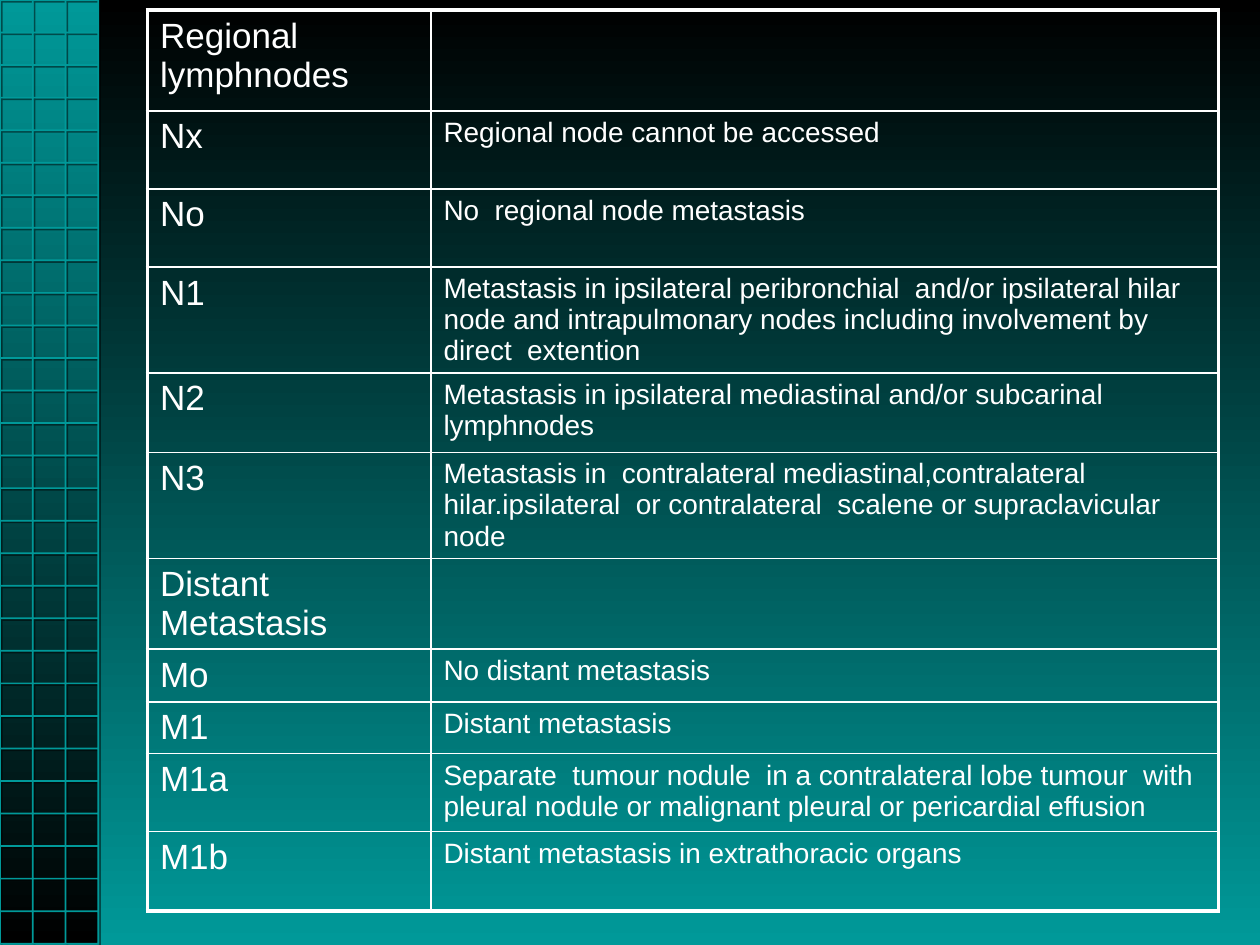
from lxml import etree
from pptx import Presentation
from pptx import util as u
from pptx.dml.color import RGBColor
from pptx.enum import shapes
from pptx.oxml import parse_xml
from pptx.oxml.ns import nsdecls, qn

BLACK, TEAL, WHITE = "000000", "009999", "FFFFFF"
BAND_WIDTH, BAND_HEIGHT = 0.78, 7.49
GRID_COLUMNS, GRID_ROWS = 3, 29
COLUMN_WIDTHS = (2.25, 6.25)
STAGES = [
    (0.8, "Regional lymphnodes", ""),
    (0.62, "Nx", "Regional node cannot be accessed"),
    (0.62, "No", "No  regional node metastasis"),
    (0.84, "N1", "Metastasis in ipsilateral peribronchial  and/or ipsilateral hilar "
     "node and intrapulmonary nodes including involvement by direct  extention"),
    (0.63, "N2", "Metastasis in ipsilateral mediastinal and/or subcarinal lymphnodes"),
    (0.84, "N3", "Metastasis in  contralateral mediastinal,contralateral "
     "hilar.ipsilateral  or contralateral  scalene or supraclavicular node"),
    (0.72, "Distant Metastasis", ""),
    (0.42, "Mo", "No distant metastasis"),
    (0.41, "M1", "Distant metastasis"),
    (0.62, "M1a", "Separate  tumour nodule  in a contralateral lobe tumour  with "
     "pleural nodule or malignant pleural or pericardial effusion"),
    (0.63, "M1b", "Distant metastasis in extrathoracic organs"),
]


def color(value):
    """Return the colour for a hex string."""
    return RGBColor.from_string(value)


def set_gradient(fill, top, bottom):
    """Fill from the top colour down to the bottom colour."""
    fill.gradient()
    fill.gradient_angle = 270
    for stop, position, value in zip(fill.gradient_stops, (0, 1), (top, bottom)):
        stop.position = position
        stop.color.rgb = color(value)


def add_band(slide):
    """Add the gradient band at the left edge."""
    band = slide.shapes.add_shape(shapes.MSO_SHAPE.RECTANGLE, 0, 0,
                                  u.Inches(BAND_WIDTH), u.Inches(BAND_HEIGHT))
    band.shadow.inherit = False
    band.line.fill.background()
    set_gradient(band.fill, TEAL, BLACK)


def grid_points():
    """Return one continuous path through all grid lines."""
    points = []
    for column in range(GRID_COLUMNS + 1):
        x = column * BAND_WIDTH / GRID_COLUMNS
        ends = (BAND_HEIGHT, 0) if column % 2 else (0, BAND_HEIGHT)
        points += [(x, y) for y in ends]
    for row in range(1, GRID_ROWS + 1):
        y = row * BAND_HEIGHT / GRID_ROWS
        ends = (BAND_WIDTH, 0) if row % 2 else (0, BAND_WIDTH)
        points += [(x, y) for x in ends]
    points += [(BAND_WIDTH, BAND_HEIGHT), (BAND_WIDTH, 0)]
    return [(u.Inches(x), u.Inches(y)) for x, y in points]


def add_grid(slide):
    """Add the outlined grid with its soft offset shadow."""
    start, *points = grid_points()
    builder = slide.shapes.build_freeform(*start)
    builder.add_line_segments(points, close=True)
    grid = builder.convert_to_shape()
    grid.fill.background()
    grid.line.color.rgb = color(TEAL)
    grid.line.width = u.Pt(1)
    grid.shadow.inherit = False
    effects = grid._element.spPr.find(qn("a:effectLst"))
    effects.append(parse_xml(
        f'<a:outerShdw {nsdecls("a")} blurRad="0" dist="{u.Pt(1.4)}" dir="2700000">'
        f'<a:srgbClr val="{BLACK}"><a:alpha val="50000"/></a:srgbClr></a:outerShdw>'))


def set_border(cell, side, width):
    """Draw one white border of a cell."""
    line = etree.SubElement(cell._tc.get_or_add_tcPr(), qn(f"a:ln{side}"),
                            w=str(u.Pt(width)))
    fill = etree.SubElement(line, qn("a:solidFill"))
    etree.SubElement(fill, qn("a:srgbClr"), val=WHITE)


def fill_cell(cell, words, size, outer):
    """Write a cell and draw its borders, thick on the outer sides."""
    for side in "LRTB":
        set_border(cell, side, 2.25 if side in outer else 1)
    cell.fill.background()
    paragraph = cell.text_frame.paragraphs[0]
    paragraph.text = words
    font_format = {"name": "Arial", "size": u.Pt(size), "bold": False}
    for name, value in font_format.items():
        setattr(paragraph.font, name, value)
    paragraph.font.color.rgb = color(WHITE)


def add_staging_table(slide):
    """Add the table of node and metastasis stages."""
    height = sum(stage[0] for stage in STAGES)
    table = slide.shapes.add_table(
        len(STAGES), len(COLUMN_WIDTHS), u.Inches(1.17), u.Inches(0.08),
        u.Inches(sum(COLUMN_WIDTHS)), u.Inches(height)).table
    for name in ("first_row", "horz_banding"):
        setattr(table, name, False)
    for column, width in zip(table.columns, COLUMN_WIDTHS):
        column.width = u.Inches(width)
    for index, (row_height, stage, meaning) in enumerate(STAGES):
        table.rows[index].height = u.Inches(row_height)
        edge = {0: "T", len(STAGES) - 1: "B"}.get(index, "")
        fill_cell(table.cell(index, 0), stage, 20, "L" + edge)
        fill_cell(table.cell(index, 1), meaning, 16, "R" + edge)


def main():
    """Build and save the slide."""
    presentation = Presentation()
    presentation.slide_width = u.Inches(10)
    presentation.slide_height = u.Inches(7.5)
    slide = presentation.slides.add_slide(presentation.slide_layouts[6])
    set_gradient(slide.background.fill, BLACK, TEAL)
    add_band(slide)
    add_grid(slide)
    add_staging_table(slide)
    presentation.save("out.pptx")


if __name__ == "__main__":
    main()
